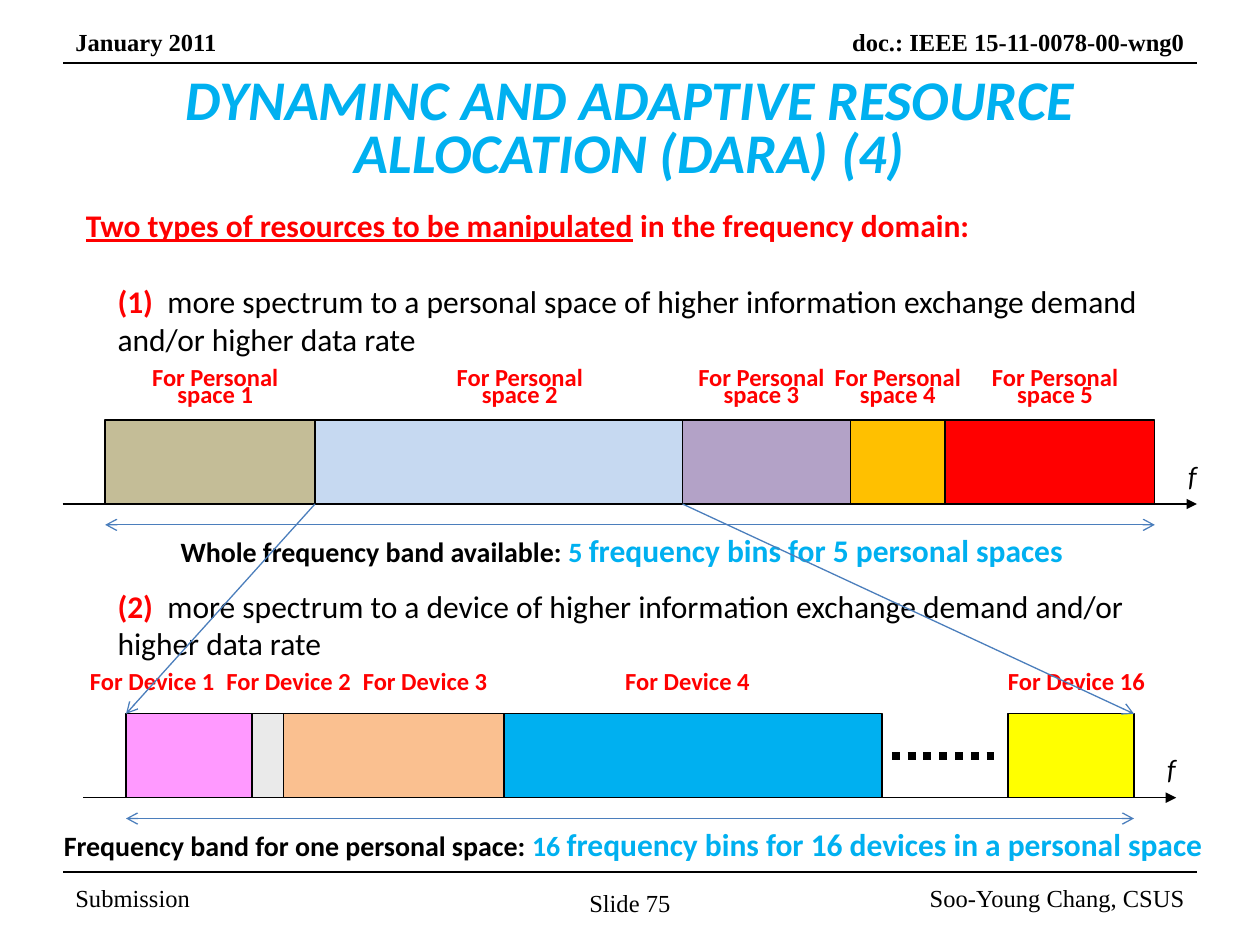
from dataclasses import dataclass, field
from typing import Any

from lxml.etree import SubElement
from pptx import Presentation
from pptx.dml.color import RGBColor as Rgb
from pptx.enum.dml import MSO_LINE as Dash
from pptx.enum.shapes import MSO_CONNECTOR as Conn, MSO_SHAPE as Shape
from pptx.enum.text import MSO_ANCHOR as Anchor, PP_ALIGN as Align
from pptx.oxml.ns import qn
from pptx.util import Cm, Pt


@dataclass(frozen=True)
class Theme:
    black: str = "000000"
    red: str = "FF0000"
    sky: str = "00B0F0"
    blue: str = "4B7EBC"
    sans: str = "Calibri"
    serif: str = "Times New Roman"
    title: int = 32
    body: int = 18
    note: int = 16
    small: int = 14
    thin: float = 0.75
    thick: float = 4.5


@dataclass
class Run:
    text: str
    size: int
    color: str
    name: str
    form: dict[str, bool] = field(default_factory=dict)


@dataclass
class Para:
    runs: list[Run]
    form: dict[str, Any] = field(default_factory=dict)
    indent: float = 0


@dataclass
class Bin:
    label: str
    fill: str
    width: float
    mark: float  # left edge of the label
    gap: float = 0  # free room before the bin


@dataclass
class Band:
    left: float
    right: float
    top: float
    over: float  # how far the axis runs past each end
    caption: tuple[str, str, str]
    note: tuple[float, float]  # left and width of the caption
    align: Align
    bins: list[Bin]


T = Theme()
HIGH, DROP, WIDE = 1.69, 0.42, 3.6
BOLD = {"bold": True}
MID = {"alignment": Align.CENTER}
END = {"alignment": Align.RIGHT}

prs = Presentation()
prs.slide_width, prs.slide_height = Cm(25.4), Cm(19.05)
slide = prs.slides.add_slide(prs.slide_layouts[6])


def apply(item: Any, form: dict[str, Any]) -> None:
    for key, value in form.items():
        setattr(item, key, value)


def sans(text: str, size: int, color: str, **form: bool) -> Run:
    return Run(text, size, color, T.sans, form)


def serif(text: str, **form: bool) -> Run:
    return Run(text, T.small, T.black, T.serif, form)


def write(left: float, top: float, width: float, high: float,
          paras: list[Para], wrap: bool = True, anchor: Anchor = Anchor.TOP) -> None:
    box = slide.shapes.add_textbox(Cm(left), Cm(top), Cm(width), Cm(high))
    frame = box.text_frame
    apply(frame, {"word_wrap": wrap, "vertical_anchor": anchor})
    for i, para in enumerate(paras):
        p = frame.paragraphs[0] if i == 0 else frame.add_paragraph()
        apply(p, para.form)
        if para.indent:
            p._p.get_or_add_pPr().set("marL", str(Cm(para.indent)))
        for run in para.runs:
            r = p.add_run()
            r.text = run.text
            apply(r.font, {"size": Pt(run.size), "name": run.name, **run.form})
            r.font.color.rgb = Rgb.from_string(run.color)


def rule(x1: float, y1: float, x2: float, y2: float, color: str = T.black,
         width: float = T.thin, head: str = "", tail: str = "") -> Any:
    line = slide.shapes.add_connector(Conn.STRAIGHT, Cm(x1), Cm(y1), Cm(x2), Cm(y2))
    line.line.color.rgb = Rgb.from_string(color)
    line.line.width = Pt(width)
    for tag, kind in (("a:headEnd", head), ("a:tailEnd", tail)):
        if kind:
            SubElement(line.line._get_or_add_ln(), qn(tag), type=kind)
    SubElement(line._element.spPr, qn("a:effectLst"))
    return line


def block(left: float, top: float, width: float, fill: str) -> None:
    rect = slide.shapes.add_shape(Shape.RECTANGLE, Cm(left), Cm(top), Cm(width), Cm(HIGH))
    rect.shadow.inherit = False
    rect.fill.solid()
    rect.fill.fore_color.rgb = Rgb.from_string(fill)
    rect.line.color.rgb = Rgb.from_string(T.black)
    rect.line.width = Pt(T.thin)


def draw(band: Band) -> None:
    base = band.top + HIGH
    # Frequency axis
    end = band.right + band.over
    rule(band.left - band.over - 0.01, base, end, base, tail="triangle")
    write(end - 0.43, band.top + 0.64, 0.66, 0.94,
          [Para([sans("f", T.note, T.black, italic=True)])], wrap=False)
    # Bins with their labels
    x = band.left
    for b in band.bins:
        if b.gap:
            y = band.top + HIGH / 2
            dots = rule(x + 0.2, y, x + b.gap - 0.2, y, width=T.thick)
            dots.line.dash_style = Dash.ROUND_DOT
        x += b.gap
        block(x, band.top, b.width, b.fill)
        x += b.width
        write(b.mark, band.top - (1.06 if "space" in b.label else 0.84), WIDE, 0.6,
              [Para([sans(b.label, T.small, T.red, **BOLD)],
                    {**MID, "line_spacing": Pt(10)})])
    # Span and caption
    y = base + DROP
    rule(band.left, y, band.right, y, T.blue, head="arrow", tail="arrow")
    lead, count, rest = band.caption
    write(band.note[0], y, band.note[1], 1.02,
          [Para([sans(lead, T.note, T.black, **BOLD),
                 sans(count, T.note, T.sky, **BOLD),
                 sans(rest, T.body, T.sky, **BOLD)], {"alignment": band.align})],
          wrap=False)


# Header and footer
for y in (1.27, 17.58):
    rule(1.27, y, 24.13, y)
write(1.27, 0.43, 3.6, 0.86, [Para([serif("January 2011", **BOLD)])])
write(15.04, 0.43, 9.09, 0.86,
      [Para([serif("doc.: IEEE 15-11-0078-00-wng0", **BOLD)], END)])
write(1.27, 17.58, 5.92, 1.02, [Para([serif("Submission")])], anchor=Anchor.MIDDLE)
write(18.21, 17.58, 5.92, 1.02,
      [Para([serif("Soo-Young Chang, CSUS")], END)], anchor=Anchor.MIDDLE)
write(11.63, 17.78, 2.16, 0.86, [Para([serif("Slide 75")])], wrap=False)

# Title
write(1.27, 1.07, 22.86, 3.18,
      [Para([sans("DYNAMINC AND ADAPTIVE RESOURCE ALLOCATION (DARA) (4)",
                  T.title, T.sky, bold=True, italic=True)],
            {**MID, "line_spacing": Pt(30)})], anchor=Anchor.MIDDLE)

# Body
points = [
    ("(1)  ", "more spectrum to a personal space of higher information exchange demand "
     "and/or higher data rate", 22),
    ("(2)  ", "more spectrum to a device of higher information exchange demand "
     "and/or higher data rate", 131),
]
lead = Para([sans("Two types of resources to be manipulated", T.body, T.red,
                  bold=True, underline=True),
             sans(" in the frequency domain:", T.body, T.red, **BOLD)])
write(1.48, 4.02, 22.66, 11.89, [lead] + [
    Para([sans(num, T.body, T.red, **BOLD), sans(text, T.body, T.black)],
         {"space_before": Pt(gap)}, indent=0.64) for num, text, gap in points])

# Bands
whole = Band(2.12, 23.28, 8.47, 0.85,
             ("Whole frequency band available: ", "5 ",
              "frequency bins for 5 personal spaces"),
             (3.39, 18.31), Align.LEFT, [
                 Bin("For Personal space 1", "C4BD97", 4.23, 2.54),
                 Bin("For Personal space 2", "C6D9F1", 7.41, 8.68),
                 Bin("For Personal space 3", "B3A2C7", 3.39, 13.55),
                 Bin("For Personal space 4", "FFC000", 1.9, 16.3),
                 Bin("For Personal space 5", T.red, 4.23, 19.47)])
single = Band(2.54, 22.86, 14.39, 0.85,
              ("Frequency band for one personal space: ", "16 ",
               "frequency bins for 16 devices in a personal space"),
              (0.64, 24.26), Align.CENTER, [
                  Bin("For Device 1", "FF99FF", 2.54, 1.27),
                  Bin("For Device 2", "EAEAEA", 0.64, 4.02),
                  Bin("For Device 3", "FAC090", 4.44, 6.77),
                  Bin("For Device 4", T.sky, 7.62, 12.06),
                  Bin("For Device 16", "FFFF00", 2.54, 19.9, gap=2.54)])
for band in (whole, single):
    draw(band)

# Zoom from the second space into its own band
start = whole.left + whole.bins[0].width
for x1, x2 in ((start, single.left), (start + whole.bins[1].width, single.right)):
    rule(x1, whole.top + HIGH, x2, single.top, T.blue, tail="arrow")

prs.save("out.pptx")
